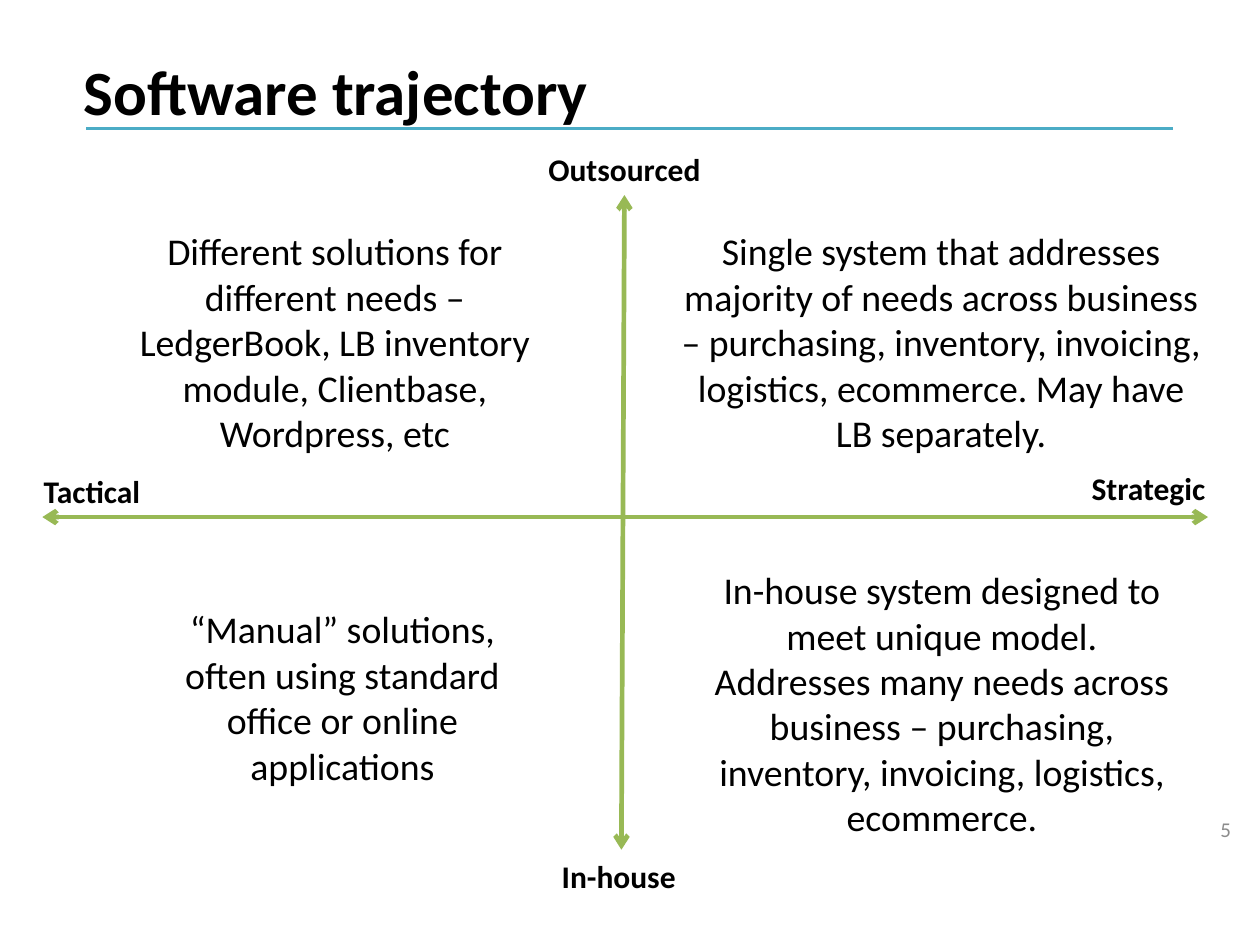
from lxml import etree
from pptx import Presentation
from pptx.dml.color import RGBColor
from pptx.enum.shapes import MSO_CONNECTOR as Connector
from pptx.enum.text import MSO_ANCHOR as Anchor, PP_ALIGN as Align
from pptx.oxml.ns import qn
from pptx.util import Pt

BLACK = RGBColor(0x00, 0x00, 0x00)
GRAY = RGBColor(0x8C, 0x8C, 0x8C)
TEAL = RGBColor(0x4B, 0xAC, 0xC6)
GREEN = RGBColor(0x98, 0xB9, 0x55)
FONT = "Calibri"

# Content: text and its box (left, top, width, height) in points
TITLE = ("Software trajectory", (33.84, 23.76, 517.68, 43.2))
PAGE_NUMBER = ("5", (457.92, 384.48, 135.36, 20.16))
AXIS_ENDS = [
    ("Outsourced", (249.84, 67.68, 95.04, 25.2), Align.CENTER),
    ("In-house", (225.9, 404.64, 137.52, 25.2), Align.CENTER),
    ("Tactical", (13.68, 221.04, 95.04, 25.2), Align.LEFT),
    ("Strategic", (486, 219.6, 95.04, 25.2), Align.RIGHT),
]
QUADRANTS = [
    ("Different solutions for different needs – LedgerBook, LB inventory "
     "module, Clientbase, Wordpress, etc", (51.84, 105.12, 215.28, 116.64)),
    ("Single system that addresses majority of needs across business – "
     "purchasing, inventory, invoicing, logistics, ecommerce. May have "
     "LB separately.", (315.36, 105.12, 265.68, 116.64)),
    ("“Manual” solutions, often using standard office or online applications",
     (67.68, 285.12, 190.8, 94.32)),
    ("In-house system designed to meet unique model. Addresses many needs "
     "across business – purchasing, inventory, invoicing, logistics, "
     "ecommerce.", (330.48, 266.4, 236.16, 138.24)),
]

# Lines: start and end points
TITLE_RULE = ((41.04, 61.2), (558.72, 61.2))
AXES = [
    ((297.36, 92.88), (295.92, 404.64)),
    ((20.16, 246.24), (575.28, 246.24)),
]

prs = Presentation()
prs.slide_width, prs.slide_height = Pt(600), Pt(450)
slide = prs.slides.add_slide(prs.slide_layouts[6])


def add_text(text, box, size=18, color=BLACK, bold=False, align=Align.CENTER,
             anchor=Anchor.TOP, inset=(7.2, 3.6), spacing=None):
    frame = slide.shapes.add_textbox(*map(Pt, box)).text_frame
    frame.word_wrap = True
    frame.vertical_anchor = anchor
    frame.margin_left = frame.margin_right = Pt(inset[0])
    frame.margin_top = frame.margin_bottom = Pt(inset[1])
    paragraph = frame.paragraphs[0]
    paragraph.alignment = align
    paragraph.line_spacing = spacing
    run = paragraph.add_run()
    run.text = text
    run.font.name, run.font.size, run.font.bold = FONT, Pt(size), bold
    run.font.color.rgb = color


def add_line(start, end, color, width, arrows=False):
    line = slide.shapes.add_connector(Connector.STRAIGHT, *map(Pt, start + end))
    line.line.color.rgb = color
    line.line.width = Pt(width)
    if arrows:
        outline = line.line._get_or_add_ln()
        for tip in ("a:headEnd", "a:tailEnd"):
            etree.SubElement(outline, qn(tip), type="arrow")
    etree.SubElement(line._element.spPr, qn("a:effectLst"))


# Title and page number
add_line(*TITLE_RULE, TEAL, 1.5)
add_text(*TITLE, size=30, bold=True, align=Align.LEFT, anchor=Anchor.MIDDLE,
         inset=(6, 3), spacing=0.9)
add_text(*PAGE_NUMBER, size=10, color=GRAY, align=Align.RIGHT,
         anchor=Anchor.MIDDLE)

# Axes and their end labels
for start, end in AXES:
    add_line(start, end, GREEN, 2.25, arrows=True)
for label, box, align in AXIS_ENDS:
    add_text(label, box, size=15, bold=True, align=align)

# Quadrant descriptions
for description, box in QUADRANTS:
    add_text(description, box)

prs.save("out.pptx")
